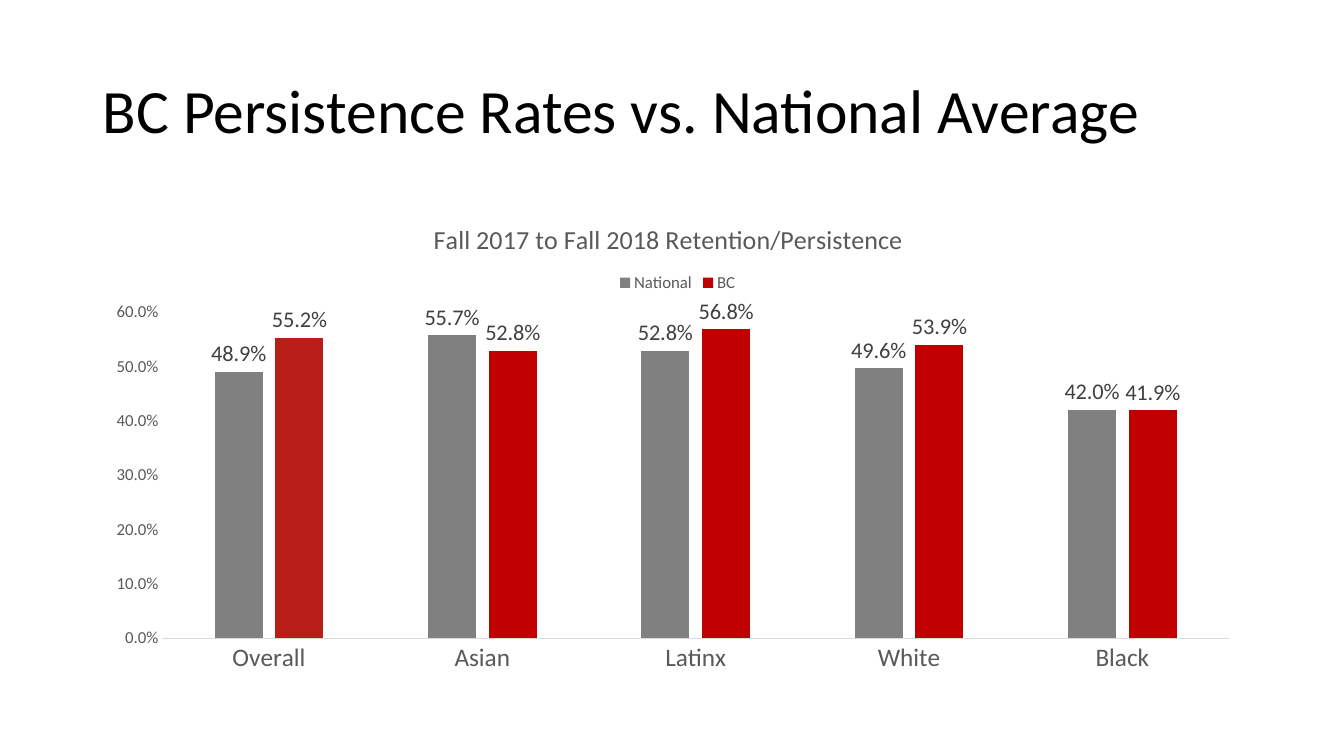
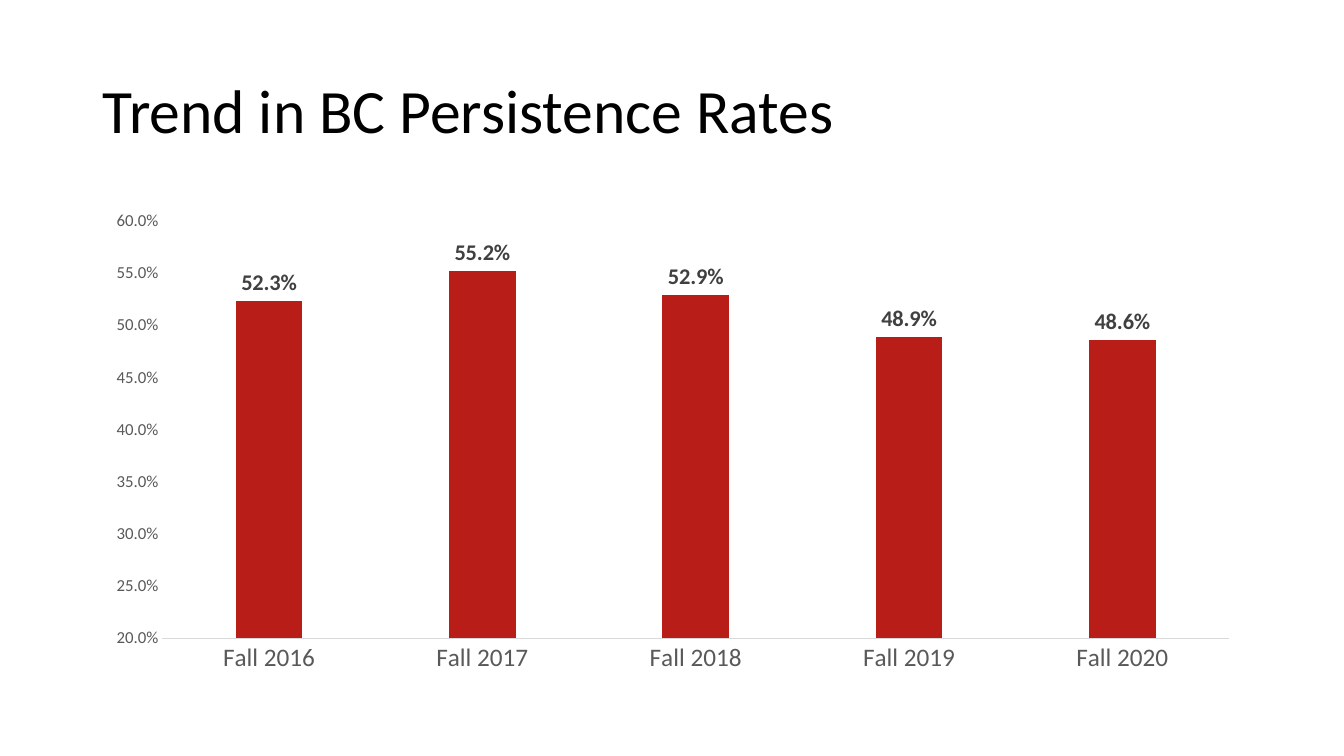
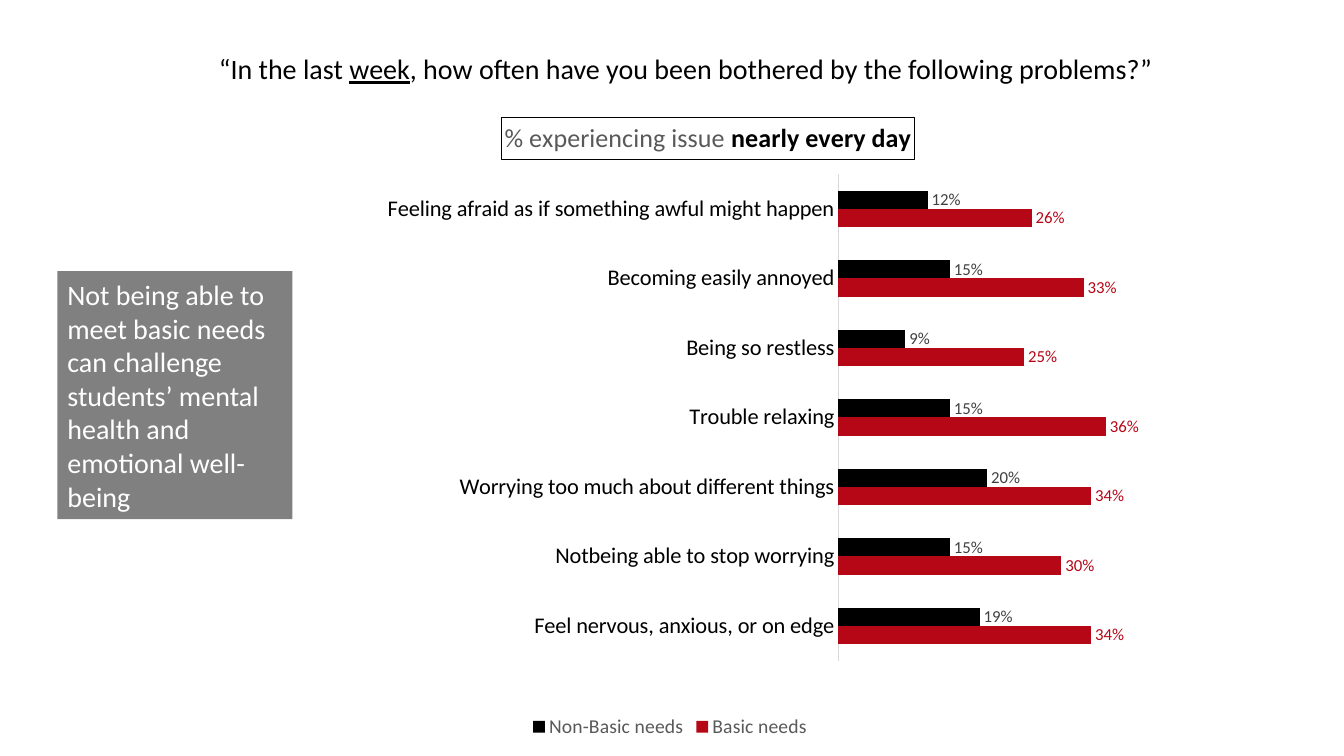
from lxml import etree
from pptx import Presentation
from pptx import util as u
from pptx.chart import data as chart_data
from pptx.dml import color
from pptx.enum import chart as ce
from pptx.enum import shapes, text
from pptx.oxml import ns

PX = 9144
CHART_BOX = (92, 200, 1150, 476)


def rgb(value):
    return color.RGBColor.from_string(value)


def place(element, index, **sizes):
    for old in element.findall(ns.qn("c:layout")):
        element.remove(old)
    layout = etree.Element(ns.qn("c:layout"))
    manual = etree.SubElement(layout, ns.qn("c:manualLayout"))
    if "w" in sizes:
        etree.SubElement(manual, ns.qn("c:layoutTarget")).set("val", "inner")
    for axis in ("x", "y"):
        etree.SubElement(manual, ns.qn(f"c:{axis}Mode")).set("val", "edge")
    for name, value in sizes.items():
        etree.SubElement(manual, ns.qn(f"c:{name}")).set("val", str(value))
    element.insert(index, layout)


class Deck:
    FONT = "Calibri"
    BLACK = "000000"
    WHITE = "FFFFFF"
    GRAY = "808080"
    TEXT = "595959"
    LABEL = "404040"
    RULE = "D9D9D9"
    BRICK = "B81E17"
    RED = "C00000"
    CRIMSON = "B60717"

    def __init__(self):
        self.presentation = Presentation()
        self.presentation.slide_width = 1333 * PX
        self.presentation.slide_height = 750 * PX
        self.slide = None

    def style(self, font, size, fill, bold=False):
        font.name = self.FONT
        font.size = u.Pt(size)
        font.bold = bold
        font.color.rgb = rgb(fill)

    def title(self, pieces, box=(92, 40, 1150, 145), size=44,
              anchor=text.MSO_ANCHOR.MIDDLE, spacing=0.9):
        self.slide = self.presentation.slides.add_slide(
            self.presentation.slide_layouts[5])
        shape = self.slide.shapes.title
        shape.left, shape.top, shape.width, shape.height = (n * PX for n in box)
        frame = shape.text_frame
        frame.word_wrap = True
        frame.auto_size = text.MSO_AUTO_SIZE.NONE
        frame.vertical_anchor = anchor
        paragraph = frame.paragraphs[0]
        paragraph.alignment = text.PP_ALIGN.LEFT
        paragraph.line_spacing = spacing
        for words, underline in pieces:
            run = paragraph.add_run()
            run.text = words
            self.style(run.font, size, self.BLACK)
            run.font.underline = underline

    def callout(self, words, box):
        shape = self.slide.shapes.add_shape(
            shapes.MSO_SHAPE.RECTANGLE, *(n * PX for n in box))
        shape.shadow.inherit = False
        shape.fill.solid()
        shape.fill.fore_color.rgb = rgb(self.GRAY)
        shape.line.fill.background()
        frame = shape.text_frame
        frame.word_wrap = True
        frame.vertical_anchor = text.MSO_ANCHOR.MIDDLE
        frame.text = words
        paragraph = frame.paragraphs[0]
        paragraph.alignment = text.PP_ALIGN.LEFT
        self.style(paragraph.runs[0].font, 20, self.WHITE)

    def chart(self, categories, series, box=CHART_BOX, kind="COLUMN_CLUSTERED",
              gap=219, overlap=-27, number_format="0.0%",
              label_size=16, label_bold=False):
        data = chart_data.CategoryChartData(number_format=number_format)
        data.categories = categories
        for name, values, *_ in series:
            data.add_series(name, values)
        chart = self.slide.shapes.add_chart(
            ce.XL_CHART_TYPE[kind], *(n * PX for n in box), data).chart
        self.style(chart.font, 10, self.BLACK)
        chart.has_title = False
        chart.has_legend = False
        plot = chart.plots[0]
        plot.gap_width = gap
        plot.overlap = overlap
        plot.vary_by_categories = False
        for item, (_, _, fill, label_color) in zip(plot.series, series):
            item.format.fill.solid()
            item.format.fill.fore_color.rgb = rgb(fill)
            item.invert_if_negative = False
            labels = item.data_labels
            labels.show_value = True
            labels.position = ce.XL_LABEL_POSITION.OUTSIDE_END
            labels.number_format = number_format
            labels.number_format_is_linked = False
            self.style(labels.font, label_size, label_color, label_bold)
        return chart

    def axes(self, chart, low, high, step, category_size=18,
             category_color=TEXT, show_values=True):
        category = chart.category_axis
        category.major_tick_mark = ce.XL_TICK_MARK.NONE
        category.has_major_gridlines = False
        category.format.line.color.rgb = rgb(self.RULE)
        category.format.line.width = u.Pt(0.75)
        self.style(category.tick_labels.font, category_size, category_color)
        value = chart.value_axis
        value.has_major_gridlines = False
        value.minimum_scale = low
        value.maximum_scale = high
        value.major_unit = step
        value.visible = show_values
        if show_values:
            value.major_tick_mark = ce.XL_TICK_MARK.NONE
            value.format.line.fill.background()
            value.tick_labels.number_format = "0.0%"
            value.tick_labels.number_format_is_linked = False
            self.style(value.tick_labels.font, 12, self.TEXT)

    def plot_area(self, chart, x, y, w, h):
        area = chart._chartSpace.find(".//" + ns.qn("c:plotArea"))
        place(area, 0, x=x, y=y, w=w, h=h)

    def chart_title(self, chart, pieces, x, y, framed=False):
        title = chart.chart_title
        paragraph = title.text_frame.paragraphs[0]
        for words, fill, bold in pieces:
            run = paragraph.add_run()
            run.text = words
            self.style(run.font, 18.6, fill, bold)
        if framed:
            title.format.line.color.rgb = rgb(self.BLACK)
            title.format.line.width = u.Pt(0.75)
        place(title._element, 1, x=x, y=y)

    def legend(self, chart, position, size, at=None):
        chart.has_legend = True
        legend = chart.legend
        legend.position = position
        legend.include_in_layout = False
        self.style(legend.font, size, self.TEXT)
        if at:
            place(legend._element, 1, x=at[0], y=at[1])


def national_slide(deck):
    deck.title([("BC Persistence Rates vs. National Average", False)])
    chart = deck.chart(
        ["Overall", "Asian", "Latinx", "White", "Black"],
        [("National", [0.489, 0.557, 0.528, 0.496, 0.42], deck.GRAY, deck.LABEL),
         ("BC", [0.552, 0.528, 0.568, 0.539, 0.419], deck.RED, deck.LABEL)])
    overall = chart.plots[0].series[1].points[0].format.fill
    overall.solid()
    overall.fore_color.rgb = rgb(deck.BRICK)
    deck.axes(chart, 0, 0.6, 0.1)
    deck.plot_area(chart, 0.06, 0.23, 0.92, 0.68)
    deck.chart_title(
        chart, [("Fall 2017 to Fall 2018 Retention/Persistence", deck.TEXT, False)],
        0.29, 0.03)
    deck.legend(chart, ce.XL_LEGEND_POSITION.TOP, 12, (0.45, 0.14))


def trend_slide(deck):
    deck.title([("Trend in BC Persistence Rates", False)])
    chart = deck.chart(
        [f"Fall {year}" for year in range(2016, 2021)],
        [("Series 1", [0.523, 0.552, 0.529, 0.489, 0.486], deck.BRICK, deck.LABEL)],
        label_bold=True)
    deck.axes(chart, 0.2, 0.6, 0.05)
    deck.plot_area(chart, 0.06, 0.04, 0.92, 0.87)


def needs_slide(deck):
    deck.title(
        [("“In the last ", False), ("week", True),
         (", how often have you been bothered by the following problems?”", False)],
        (207, 46, 948, 44), 20, text.MSO_ANCHOR.TOP, 1.0)
    deck.callout(
        "Not being able to meet basic needs can challenge students’ mental "
        "health and emotional well-being", (57, 269, 233, 246))
    chart = deck.chart(
        ["Feel nervous, anxious, or on edge",
         "Notbeing able to stop worrying",
         "Worrying too much about different things",
         "Trouble relaxing",
         "Being so restless",
         "Becoming easily annoyed",
         "Feeling afraid as if something awful might happen"],
        [("Basic needs", [0.34, 0.3, 0.34, 0.36, 0.25, 0.33, 0.26],
          deck.CRIMSON, deck.CRIMSON),
         ("Non-Basic needs", [0.19, 0.15, 0.2, 0.15, 0.09, 0.15, 0.12],
          deck.BLACK, deck.LABEL)],
        (173, 110, 983, 627), "BAR_CLUSTERED", 182, 0, "0%", 12)
    deck.axes(chart, 0, 0.4, 0.1, 16, deck.BLACK, False)
    deck.plot_area(chart, 0.67, 0.1, 0.3, 0.77)
    deck.chart_title(
        chart, [("% experiencing issue ", deck.TEXT, False),
                ("nearly every day", deck.BLACK, True)],
        0.33, 0.01, True)
    deck.legend(chart, ce.XL_LEGEND_POSITION.BOTTOM, 14)


def main():
    deck = Deck()
    national_slide(deck)
    trend_slide(deck)
    needs_slide(deck)
    deck.presentation.save("out.pptx")


if __name__ == "__main__":
    main()
